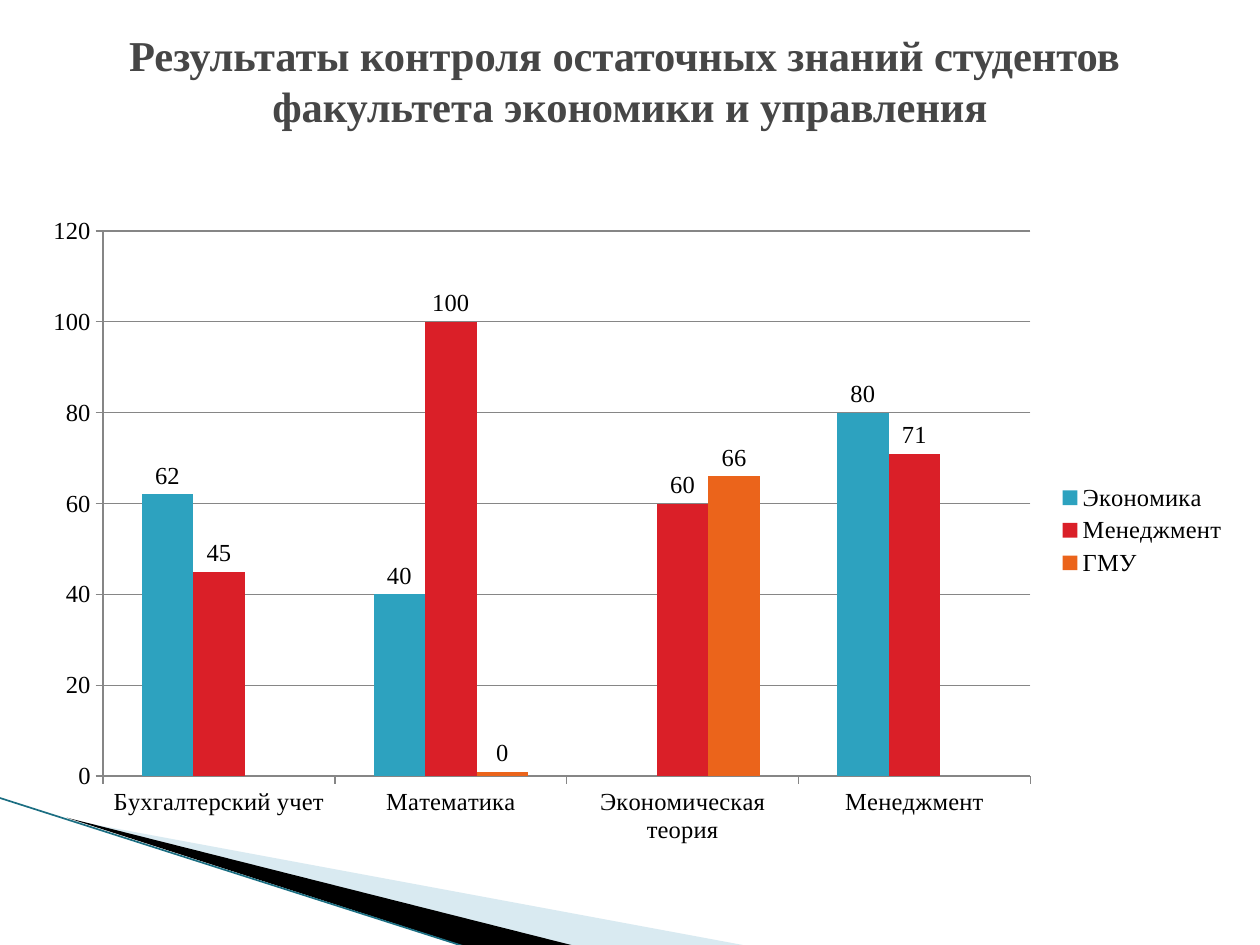
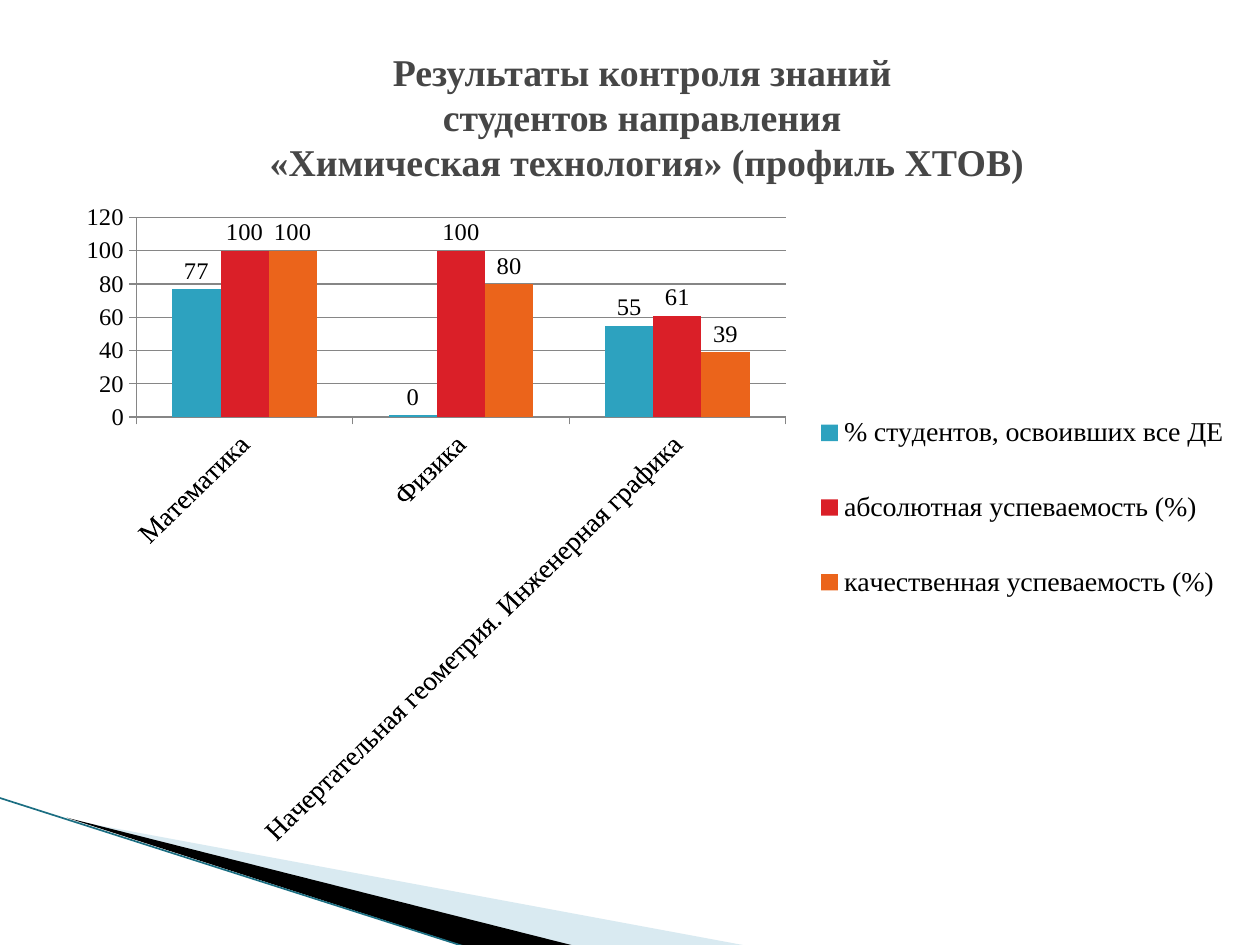
"""Build two slides with column charts of student knowledge checks."""
from lxml.etree import SubElement
from pptx import Presentation
from pptx.chart.data import CategoryChartData
from pptx.dml.color import RGBColor
from pptx.enum.chart import XL_CHART_TYPE as ChartType
from pptx.enum.chart import XL_LABEL_POSITION as LabelPosition
from pptx.enum.chart import XL_LEGEND_POSITION as LegendPosition
from pptx.enum.chart import XL_TICK_MARK as TickMark
from pptx.enum.shapes import MSO_CONNECTOR as Connector
from pptx.enum.text import MSO_ANCHOR as Anchor
from pptx.enum.text import MSO_AUTO_SIZE as AutoSize
from pptx.enum.text import PP_ALIGN as Align
from pptx.oxml.ns import qn
from pptx.util import Pt

TITLE_GRAY = RGBColor(0x46, 0x46, 0x46)
AXIS_GRAY = RGBColor(0x86, 0x86, 0x86)
BLACK = RGBColor(0, 0, 0)
PALE_BLUE = RGBColor(0xA0, 0xCB, 0xDC)
DARK_TEAL = RGBColor(0x1B, 0x6E, 0x82)
SERIES_COLORS = [
    RGBColor(0x2D, 0xA2, 0xBF),
    RGBColor(0xDA, 0x1F, 0x28),
    RGBColor(0xEB, 0x64, 0x1B),
]
FONT = "Times New Roman"

WEDGES = [
    ([(39.6, 468.5), (428.4, 540.7), (328.3, 540.7)], PALE_BLUE, 40),
    ([(38.2, 467.3), (329, 540.7), (267.8, 541.4)], BLACK, 100),
]

SLIDES = [
    {
        "title": "Результаты контроля остаточных знаний студентов \v"
                 "факультета экономики и управления",
        "title_box": (36, 21.6, 648, 62.6),
        "title_size": 24.3,
        "title_bottom": 18.5,
        "chart_box": (16.6, 116.6, 691.9, 373),
        "legend_layout": None,
        "category_size": 14,
        "category_angle": 0,
        "categories": ["Бухгалтерский учет", "Математика",
                       "Экономическая теория", "Менеджмент"],
        "series": {
            "Экономика": (62, 40, None, 80),
            "Менеджмент": (45, 100, 60, 71),
            "ГМУ": (None, 1, 66, None),
        },
        "zero_label": (2, 1),
    },
    {
        "title": "Результаты контроля знаний \vстудентов направления \v"
                 "«Химическая технология» (профиль ХТОВ)",
        "title_box": (36, 21.6, 667.4, 90),
        "title_size": 21.6,
        "title_bottom": 3.6,
        "chart_box": (36, 116.6, 672.5, 367.2),
        "legend_layout": (0.64, 0.27, 0.35, 0.43),
        "category_size": 16,
        "category_angle": -45,
        "categories": ["Математика", "Физика",
                       "Начертательная геометрия. Инженерная графика"],
        "series": {
            "% студентов, освоивших все ДЕ": (77, 1, 55),
            "абсолютная успеваемость (%)": (100, 100, 61),
            "качественная успеваемость (%)": (100, 80, 39),
        },
        "zero_label": (0, 1),
    },
]


def set_values(target, **values):
    """Set each named attribute on the target."""
    for name, value in values.items():
        setattr(target, name, value)


def place_legend(legend, fractions):
    """Give the legend a fixed place as fractions of the chart."""
    parent = legend._element
    for old in parent.findall(qn("c:layout")):
        parent.remove(old)
    layout = SubElement(parent, qn("c:layout"))
    manual = SubElement(layout, qn("c:manualLayout"))
    settings = {"xMode": "edge", "yMode": "edge", **dict(zip("xywh", fractions))}
    for name, value in settings.items():
        SubElement(manual, qn(f"c:{name}")).set("val", str(value))
    parent.insert(1, layout)


deck = Presentation()
set_values(deck, slide_width=Pt(720), slide_height=Pt(540))

for content in SLIDES:
    page = deck.slides.add_slide(deck.slide_layouts[5])

    for corners, color, opacity in WEDGES:
        points = [(Pt(x), Pt(y)) for x, y in corners]
        builder = page.shapes.build_freeform(*points[0])
        builder.add_line_segments(points[1:], close=True)
        wedge = builder.convert_to_shape()
        wedge.shadow.inherit = False
        wedge.fill.solid()
        wedge.fill.fore_color.rgb = color
        wedge.line.fill.background()
        if opacity < 100:
            tint = wedge.element.spPr.find(f"{qn('a:solidFill')}/{qn('a:srgbClr')}")
            SubElement(tint, qn("a:alpha")).set("val", str(opacity * 1000))

    edge = page.shapes.add_connector(
        Connector.STRAIGHT, Pt(-0.7), Pt(455.8), Pt(267.1), Pt(541.4))
    edge.line.color.rgb = DARK_TEAL
    edge.line.width = Pt(0.95)
    SubElement(edge.element.spPr, qn("a:effectLst"))

    title = page.shapes.title
    left, top, width, height = map(Pt, content["title_box"])
    set_values(title, left=left, top=top, width=width, height=height)
    frame = title.text_frame
    set_values(frame, text=content["title"], word_wrap=True,
               auto_size=AutoSize.NONE, vertical_anchor=Anchor.MIDDLE,
               margin_bottom=Pt(content["title_bottom"]))
    para = frame.paragraphs[0]
    set_values(para, alignment=Align.CENTER, line_spacing=1.0)
    for span in para.runs:
        set_values(span.font, name=FONT, size=Pt(content["title_size"]), bold=True)
        span.font.color.rgb = TITLE_GRAY

    data = CategoryChartData(number_format="General")
    data.categories = content["categories"]
    for name, values in content["series"].items():
        data.add_series(name, values)
    chart = page.shapes.add_chart(
        ChartType.COLUMN_CLUSTERED, *map(Pt, content["chart_box"]), data).chart
    set_values(chart, has_title=False, has_legend=True)
    set_values(chart.font, name=FONT, size=Pt(14))
    chart.font.color.rgb = BLACK
    set_values(chart.legend, position=LegendPosition.RIGHT, include_in_layout=False)
    category_size = Pt(content["category_size"])
    set_values(chart.legend.font, name=FONT, size=category_size)
    plot = chart.plots[0]
    set_values(plot, gap_width=150, overlap=0, vary_by_categories=False)

    for axis, size in ((chart.category_axis, category_size), (chart.value_axis, Pt(14))):
        set_values(axis, major_tick_mark=TickMark.OUTSIDE, minor_tick_mark=TickMark.NONE)
        set_values(axis.tick_labels.font, name=FONT, size=size)
        axis.format.line.color.rgb = AXIS_GRAY
    set_values(chart.value_axis, minimum_scale=0, maximum_scale=120,
               major_unit=20, has_major_gridlines=True)
    chart.value_axis.major_gridlines.format.line.color.rgb = AXIS_GRAY
    if content["category_angle"]:
        body = chart.category_axis._element.find(f"{qn('c:txPr')}/{qn('a:bodyPr')}")
        body.set("rot", str(content["category_angle"] * 60000))
        body.set("vert", "horz")

    for series, color in zip(plot.series, SERIES_COLORS):
        series.format.fill.solid()
        series.format.fill.fore_color.rgb = color
        labels = series.data_labels
        set_values(labels, show_value=True, position=LabelPosition.OUTSIDE_END)
        set_values(labels.font, name=FONT, size=Pt(14))

    series_index, point_index = content["zero_label"]
    label = plot.series[series_index].points[point_index].data_label
    label.text_frame.text = "0"
    label.position = LabelPosition.OUTSIDE_END
    zero = label.text_frame.paragraphs[0].runs[0]
    set_values(zero.font, name=FONT, size=Pt(14))

    if content["legend_layout"]:
        place_legend(chart.legend, content["legend_layout"])

deck.save("out.pptx")
